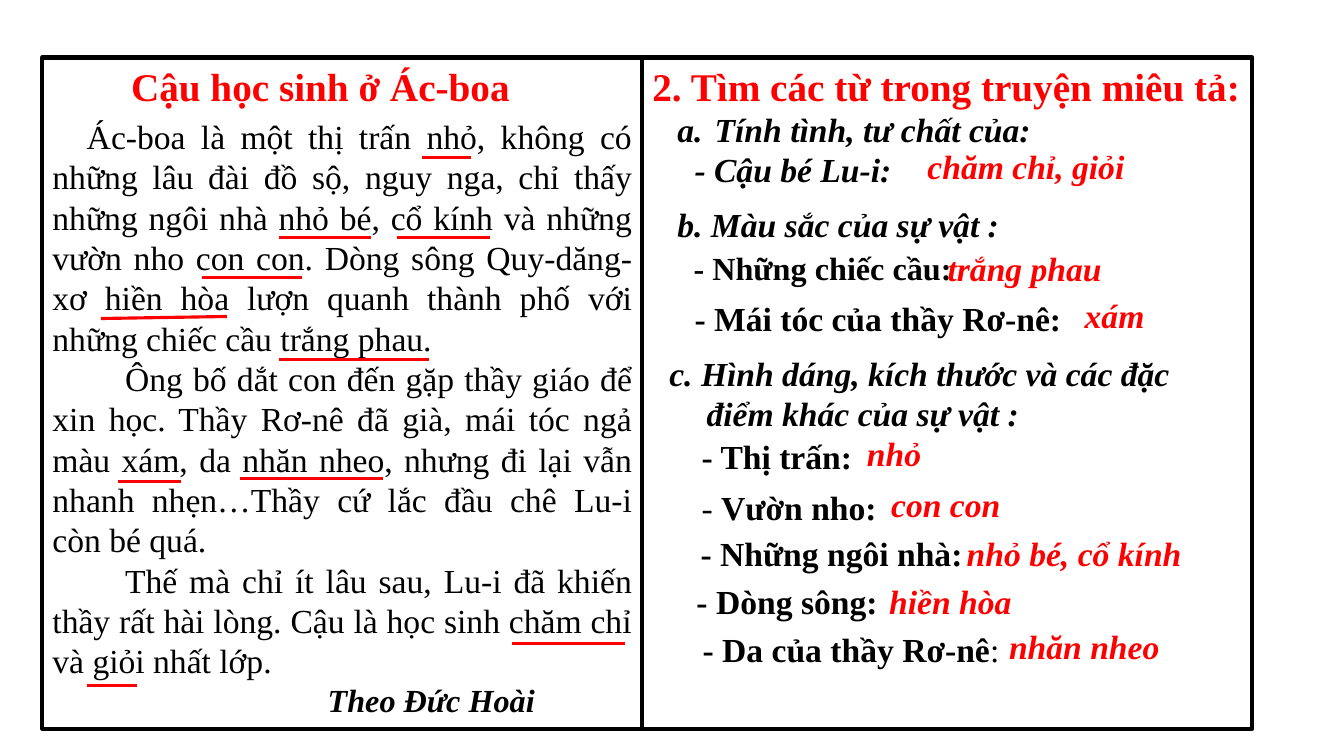
"""Build a reading lesson slide: a passage on the left, word-finding answers on the right."""
import dataclasses
import pptx
import pptx.dml.color
import pptx.enum.shapes
import pptx.enum.text
import pptx.oxml.ns
import pptx.util
from lxml import etree

Inches, Pt = pptx.util.Inches, pptx.util.Pt
Align = pptx.enum.text.PP_ALIGN


@dataclasses.dataclass
class Theme:
    font: str = "Times New Roman"
    black: pptx.dml.color.RGBColor = pptx.dml.color.RGBColor(0, 0, 0)
    red: pptx.dml.color.RGBColor = pptx.dml.color.RGBColor(255, 0, 0)
    head: int = 28
    body: int = 24
    small: int = 23
    frame: float = 3
    mark: float = 2.25


theme = Theme()


def write(para, text, size, color, bold=True, ital=False, left=0, first=0, bullet=None):
    """Fill a paragraph; parts between asterisks are not bold."""
    props = para._p.get_or_add_pPr()
    props.set("marL", str(Inches(left)))
    props.set("indent", str(Inches(first)))
    para.line_spacing = 1.0
    para.space_before = Pt(0)
    kind = "buAutoNum" if bullet else "buNone"
    mark = etree.SubElement(props, pptx.oxml.ns.qn("a:" + kind))
    if bullet:
        mark.set("type", bullet)
    for i, part in enumerate(text.split("*")):
        if part:
            run = para.add_run()
            run.text = part
            run.font.name = theme.font
            run.font.size = Pt(size)
            run.font.color.rgb = color
            run.font.bold = bold and i % 2 == 0
            run.font.italic = ital


def place(shape, left, top, width, height):
    """Position a text shape and anchor its text at the top left."""
    shape.left, shape.top = Inches(left), Inches(top)
    shape.width, shape.height = Inches(width), Inches(height)
    frame = shape.text_frame
    frame.word_wrap = True
    frame.auto_size = pptx.enum.text.MSO_AUTO_SIZE.NONE
    frame.vertical_anchor = pptx.enum.text.MSO_ANCHOR.TOP
    return frame


deck = pptx.Presentation()
deck.slide_width, deck.slide_height = Inches(13.33), Inches(7.5)
slide = deck.slides.add_slide(deck.slide_layouts[1])
shapes = slide.shapes

title = place(shapes.title, 6.37, 0.57, 6.3, 0.57).paragraphs[0]
write(title, "2. Tìm các từ trong truyện miêu tả:", theme.head, theme.red)
title.alignment = Align.LEFT

story = slide.placeholders[1]
story.line.color.rgb = theme.black
story.line.width = Pt(theme.frame)
tale = place(story, 0.42, 0.57, 5.95, 6.66)
lines = [
    ("Ác-boa là một thị trấn nhỏ, không có những lâu đài đồ sộ, nguy nga, chỉ thấy "
     "những ngôi nhà nhỏ bé, cổ kính và những vườn nho con con. Dòng sông Quy-dăng-xơ "
     "hiền hòa lượn quanh thành phố với những chiếc cầu trắng phau.", 0.34),
    ("Ông bố dắt con đến gặp thầy giáo để xin học. Thầy Rơ-nê đã già, mái tóc ngả màu "
     "xám, da nhăn nheo, nhưng đi lại vẫn nhanh nhẹn…Thầy cứ lắc đầu chê Lu-i còn bé quá.", 0.72),
    ("Thế mà chỉ ít lâu sau, Lu-i đã khiến thầy rất hài lòng. Cậu là học sinh chăm chỉ "
     "và giỏi nhất lớp.", 0.72),
]
write(tale.paragraphs[0], "Cậu học sinh ở Ác-boa", theme.head, theme.red, first=0.78)
for text, first in lines:
    para = tale.add_paragraph()
    write(para, text, theme.body, theme.black, bold=False, first=first)
    para.alignment = Align.JUSTIFY
tale.paragraphs[1].space_before = Pt(4.5)
write(tale.add_paragraph(), "Theo Đức Hoài", theme.small, theme.black, ital=True, first=2.73)

trait = place(shapes.add_textbox(0, 0, 0, 0), 6.62, 1.03, 4.44, 0.91)
write(trait.paragraphs[0], "Tính tình, tư chất của:", theme.body, theme.black,
      ital=True, left=0.37, first=-0.37, bullet="alphaLcPeriod")
write(trait.add_paragraph(), "- Cậu bé Lu-i:", theme.body, theme.black, ital=True, left=0.17)

labels = [
    ("b. Màu sắc của sự vật :", 6.62, 1.97, 3.43, 0.51, theme.body, True),
    ("- Những chiếc cầu:", 6.78, 2.41, 2.78, 0.49, theme.small, False),
    ("- Mái tóc của thầy Rơ-nê:", 6.79, 2.91, 3.95, 0.5, theme.body, False),
    ("c. Hình dáng, kích thước và các đặc điểm khác của sự vật :",
     6.54, 3.45, 5.67, 0.91, theme.body, True),
    ("- Thị trấn:", 6.86, 4.28, 1.76, 0.5, theme.body, False),
    ("*- *Vườn nho:", 6.86, 4.78, 2.01, 0.5, theme.body, False),
    ("- Những ngôi nhà:", 6.85, 5.24, 2.96, 0.5, theme.body, False),
    ("- Dòng sông:", 6.81, 5.71, 2.07, 0.5, theme.body, False),
    ("- Da của thầy Rơ-nê*:*", 6.87, 6.19, 3.23, 0.5, theme.body, False),
]
for text, left, top, width, height, size, ital in labels:
    box = place(shapes.add_textbox(0, 0, 0, 0), left, top, width, height)
    write(box.paragraphs[0], text, size, theme.black, ital=ital, left=0.37, first=-0.37)

panel = shapes.add_shape(pptx.enum.shapes.MSO_SHAPE.RECTANGLE,
                         Inches(6.37), Inches(0.57), Inches(6.05), Inches(6.66))
panel.shadow.inherit = False
panel.fill.background()
panel.line.color.rgb = theme.black
panel.line.width = Pt(theme.frame)

marks = [
    (0.86, 6.8, 1.36, 6.8), (5.08, 6.38, 6.2, 6.38), (2.77, 3.57, 4.25, 3.57),
    (4.19, 1.56, 4.67, 1.56), (1.17, 4.78, 1.8, 4.78), (3.94, 2.36, 4.86, 2.36),
    (2.77, 2.36, 3.68, 2.36), (2, 2.75, 3, 2.75), (1, 3.16, 2.25, 3.14),
    (2.38, 4.75, 3.8, 4.75),
]
for ends in marks:
    line = shapes.add_connector(pptx.enum.shapes.MSO_CONNECTOR.STRAIGHT, *map(Inches, ends))
    line.line.color.rgb = theme.red
    line.line.width = Pt(theme.mark)
    etree.SubElement(line._element.spPr, pptx.oxml.ns.qn("a:effectLst"))

answers = [
    ("nhăn nheo", 9.91, 6.16, 2.3), ("chăm chỉ, giỏi", 9.1, 1.4, 2.25),
    ("trắng phau", 9.3, 2.41, 1.93), ("xám", 10.66, 2.88, 0.83),
    ("nhỏ", 8.5, 4.25, 0.83), ("con con", 8.74, 4.75, 1.42),
    ("nhỏ bé, cổ kính", 9.49, 5.24, 2.4), ("hiền hòa", 8.72, 5.71, 1.48),
]
for text, left, top, width in answers:
    box = place(shapes.add_textbox(0, 0, 0, 0), left, top, width, 0.42)
    write(box.paragraphs[0], text, theme.body, theme.red, ital=True, left=0.37, first=-0.37)

deck.save("out.pptx")
